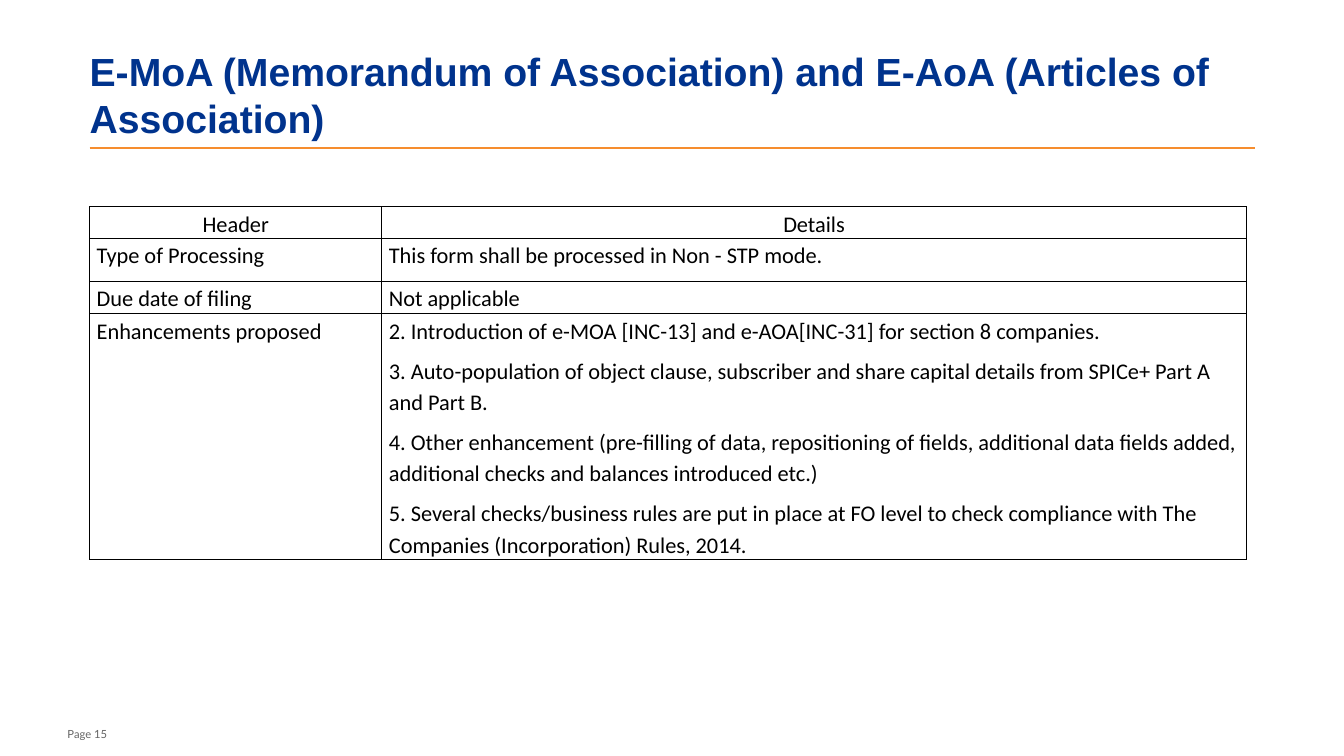
from dataclasses import dataclass

import lxml.etree
import pptx
import pptx.dml.color
import pptx.enum.shapes
import pptx.enum.text
import pptx.oxml.ns
import pptx.util

Inches = pptx.util.Inches
Pt = pptx.util.Pt
ALIGN = pptx.enum.text.PP_ALIGN
ANCHOR = pptx.enum.text.MSO_ANCHOR
qn = pptx.oxml.ns.qn

COLOURS = {"title": "00338D", "rule": "F68D2E", "page": "646464", "table": "000000"}


@dataclass
class TextStyle:
    font: str
    size: float
    colour: str
    bold: bool = False
    align: ALIGN = ALIGN.LEFT
    line_spacing: float = 1.0


@dataclass
class FormRow:
    height: float
    header: str
    details: list[str]
    align: ALIGN = ALIGN.LEFT


TITLE_STYLE = TextStyle("Arial", 28, "title", bold=True)
PAGE_STYLE = TextStyle("Lato", 8, "page")
COLUMN_WIDTHS = [2.9, 8.58]
ROWS = [
    FormRow(0.31, "Header", ["Details"], ALIGN.CENTER),
    FormRow(0.43, "Type of Processing", ["This form shall be processed in Non - STP mode."]),
    FormRow(0.32, "Due date of filing", ["Not applicable"]),
    FormRow(2.44, "Enhancements proposed", [
        "2. Introduction of e-MOA [INC-13] and e-AOA[INC-31] for section 8 companies.",
        "3. Auto-population of object clause, subscriber and share capital details "
        "from SPICe+ Part A and Part B.",
        "4. Other enhancement (pre-filling of data, repositioning of fields, additional "
        "data fields added, additional checks and balances introduced etc.)",
        "5. Several checks/business rules are put in place at FO level to check "
        "compliance with The Companies (Incorporation) Rules, 2014.",
    ]),
]


def rgb(name: str) -> pptx.dml.color.RGBColor:
    return pptx.dml.color.RGBColor.from_string(COLOURS[name])


def write(frame, texts: list[str], style: TextStyle, space_before: float = 0) -> None:
    """Fill a text frame, spacing every paragraph after the first."""
    for index, text in enumerate(texts):
        paragraph = frame.add_paragraph() if index else frame.paragraphs[0]
        paragraph.alignment = style.align
        paragraph.line_spacing = style.line_spacing
        paragraph.space_before = Pt(space_before if index else 0)
        run = paragraph.add_run()
        run.text = text
        run.font.name = style.font
        run.font.size = Pt(style.size)
        run.font.bold = style.bold
        run.font.color.rgb = rgb(style.colour)


def place_text(shape, box: tuple[float, ...], anchor: ANCHOR, text: str,
               style: TextStyle) -> None:
    shape.left, shape.top, shape.width, shape.height = map(Inches, box)
    frame = shape.text_frame
    frame.word_wrap = True
    frame.auto_size = pptx.enum.text.MSO_AUTO_SIZE.NONE
    frame.vertical_anchor = anchor
    frame.margin_left = frame.margin_right = frame.margin_top = frame.margin_bottom = 0
    write(frame, [text], style)


def add_title_rule(slide) -> None:
    rule = slide.shapes.add_connector(
        pptx.enum.shapes.MSO_CONNECTOR.STRAIGHT,
        Inches(0.89), Inches(1.47), Inches(12.46), Inches(1.47))
    rule.line.color.rgb = rgb("rule")
    rule.line.width = Pt(1)
    lxml.etree.SubElement(rule._element.spPr, qn("a:effectLst"))


def set_borders(cell) -> None:
    properties = cell._tc.get_or_add_tcPr()
    for position, side in enumerate(("lnL", "lnR", "lnT", "lnB")):
        border = lxml.etree.Element(qn(f"a:{side}"), w=str(Pt(1)))
        fill = lxml.etree.SubElement(border, qn("a:solidFill"))
        lxml.etree.SubElement(fill, qn("a:srgbClr"), val=COLOURS["table"])
        properties.insert(position, border)


def add_form_table(slide) -> None:
    table = slide.shapes.add_table(
        len(ROWS), len(COLUMN_WIDTHS), Inches(0.89), Inches(2.05),
        Inches(sum(COLUMN_WIDTHS)), Inches(sum(row.height for row in ROWS))).table
    table.first_row = table.horz_banding = False
    for column, width in zip(table.columns, COLUMN_WIDTHS):
        column.width = Inches(width)
    for row_index, row in enumerate(ROWS):
        table.rows[row_index].height = Inches(row.height)
        style = TextStyle("Calibri", 16, "table", align=row.align, line_spacing=1.15)
        for column_index, texts in enumerate(([row.header], row.details)):
            cell = table.cell(row_index, column_index)
            cell.margin_left = cell.margin_right = Inches(0.07)
            cell.margin_top = cell.margin_bottom = 0
            cell.fill.background()
            set_borders(cell)
            write(cell.text_frame, texts, style, space_before=6)


def main() -> None:
    deck = pptx.Presentation()
    deck.slide_width, deck.slide_height = Inches(13.34), Inches(7.5)
    slide = deck.slides.add_slide(deck.slide_layouts.get_by_name("Title Only"))
    place_text(slide.shapes.title, (0.89, 0.4, 11.54, 1.07), ANCHOR.MIDDLE,
               "E-MoA (Memorandum of Association) and E-AoA (Articles of Association)",
               TITLE_STYLE)
    add_title_rule(slide)
    add_form_table(slide)
    page_number = slide.shapes.add_textbox(0, 0, 0, 0)
    place_text(page_number, (0.67, 7.13, 0.97, 0.22), ANCHOR.BOTTOM, "Page 15", PAGE_STYLE)
    deck.save("out.pptx")


if __name__ == "__main__":
    main()
